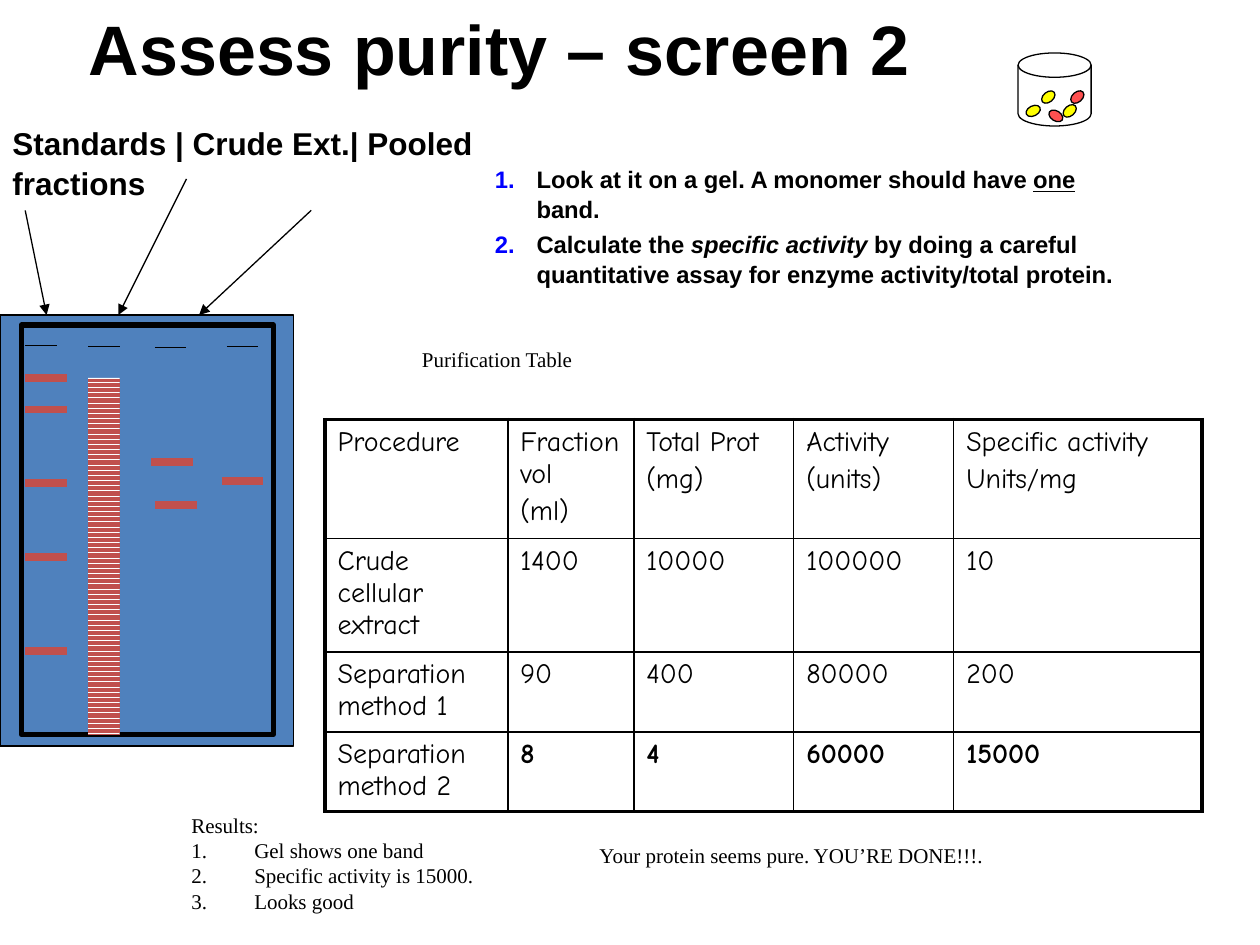
from lxml import etree
from pptx import Presentation
from pptx.dml.color import RGBColor
from pptx.enum import dml, shapes, text
from pptx.oxml.ns import qn
from pptx.util import Inches, Pt

BLACK = RGBColor(0, 0, 0)
WHITE = RGBColor(255, 255, 255)
GEL_BLUE = RGBColor(0x4F, 0x81, 0xBD)
BAND_RED = RGBColor(0xC0, 0x50, 0x4D)
YELLOW = RGBColor(255, 255, 0)
GRAIN_RED = RGBColor(0xFF, 0x50, 0x50)
KIND = shapes.MSO_SHAPE

TITLE = {"name": "Arial", "size": Pt(40), "bold": True}
HEADING = {"name": "Arial", "size": Pt(18), "bold": True}
STEP = {"name": "Arial", "size": Pt(13.6), "bold": True}
NOTE = {"name": "Times New Roman", "size": Pt(12)}
CELL = {"name": "Comic Neue", "size": Pt(16)}

ROWS = [
    ["Procedure", "Fraction vol\n(ml)", "Total Prot\n(mg)", "Activity\n(units)",
     "Specific activity\nUnits/mg"],
    ["Crude cellular extract", "1400", "10000", "100000", "10"],
    ["Separation method 1", "90", "400", "80000", "200"],
    ["Separation method 2", "8", "4", "60000", "15000"],
]
COLUMN_WIDTHS = [1.45, 1, 1.27, 1.27, 1.97]
ROW_HEIGHTS = [0.91, 0.87, 0.61, 0.61]


def add_span(para, words, style, **extra):
    span = para.add_run()
    span.text = words
    for key, value in {**style, **extra}.items():
        setattr(span.font, key, value)
    span.font.color.rgb = BLACK


def set_list(para, left, hanging, numbered=True, color=None):
    props = para._p.get_or_add_pPr()
    props.set("marL", str(Inches(left)))
    props.set("indent", str(-Inches(hanging)))
    if color:
        holder = etree.SubElement(props, qn("a:buClr"))
        etree.SubElement(holder, qn("a:srgbClr"), val=color)
    if numbered:
        etree.SubElement(props, qn("a:buFont"), typeface="+mj-lt")
        etree.SubElement(props, qn("a:buAutoNum"), type="arabicPeriod")


def add_text(page, place, paragraphs, style, wrap=True, **para_format):
    """Each paragraph is a list of (words, extra font values)."""
    frame = page.shapes.add_textbox(*map(Inches, place)).text_frame
    frame.word_wrap = wrap
    for number, spans in enumerate(paragraphs):
        para = frame.add_paragraph() if number else frame.paragraphs[0]
        for key, value in para_format.items():
            setattr(para, key, value)
        for words, extra in spans:
            add_span(para, words, style, **extra)
    return frame.paragraphs


def add_figure(parent, kind, place, fill=None, line=0.75, turn=0):
    figure = parent.shapes.add_shape(kind, *map(Inches, place))
    figure.shadow.inherit = False
    figure.rotation = turn
    if fill is None:
        figure.fill.background()
    else:
        figure.fill.solid()
        figure.fill.fore_color.rgb = fill
    if line:
        figure.line.color.rgb = BLACK
        figure.line.width = Pt(line)
    else:
        figure.line.fill.background()
    return figure


def add_line(page, start, end, color=BLACK, width=0.75, arrow=False):
    line = page.shapes.add_connector(
        shapes.MSO_CONNECTOR.STRAIGHT, *map(Inches, (*start, *end)))
    line.line.color.rgb = color
    line.line.width = Pt(width)
    if arrow:
        etree.SubElement(line.line._get_or_add_ln(), qn("a:tailEnd"), type="triangle")
    etree.SubElement(line._element.spPr, qn("a:effectLst"))


def add_gel(page):
    add_figure(page, KIND.RECTANGLE, (0, 2.5, 2.33, 3.42), GEL_BLUE)
    add_figure(page, KIND.RECTANGLE, (0.17, 2.58, 2, 3.25), line=3)
    for x, y in [(0.2, 2.74), (0.7, 2.75), (1.23, 2.76), (1.8, 2.75)]:
        add_line(page, (x, y), (x + 0.25, y))
    smear = add_figure(page, KIND.RECTANGLE, (0.7, 3, 0.25, 2.83), line=0)
    smear.fill.patterned()
    smear.fill.pattern = dml.MSO_PATTERN.DARK_HORIZONTAL
    smear.fill.fore_color.rgb = BAND_RED
    smear.fill.back_color.rgb = WHITE
    standards = [(0.2, y) for y in (3, 3.25, 3.83, 4.42, 5.17)]
    for x, y in standards + [(1.2, 3.67), (1.23, 4.01), (1.76, 3.82)]:
        add_line(page, (x, y), (x + 0.33, y), BAND_RED, 4.5)
    for start, end_x in [((0.2, 1.67), 0.37), ((1.48, 1.42), 0.94), ((2.47, 1.67), 1.58)]:
        add_line(page, start, (end_x, 2.5), arrow=True)


def add_beaker(page):
    beaker = page.shapes.add_group_shape()
    grains = [
        (8.16, 0.82, 0.08, 0.12, 243.6, YELLOW),
        (8.28, 0.71, 0.08, 0.12, 230.9, YELLOW),
        (8.34, 0.86, 0.08, 0.12, 122.2, GRAIN_RED),
        (8.43, 0.84, 0.12, 0.08, 138.8, YELLOW),
        (8.49, 0.73, 0.12, 0.08, 138.8, GRAIN_RED),
    ]
    for *place, turn, color in grains:
        add_figure(beaker, KIND.OVAL, place, color, turn=turn)
    add_figure(beaker, KIND.FLOWCHART_MAGNETIC_DISK, (8.08, 0.42, 0.58, 0.58))


def set_borders(cell, thick_sides):
    props = cell._tc.get_or_add_tcPr()
    for index, side in enumerate("LRTB"):
        width = Pt(2.25 if side in thick_sides else 1)
        border = etree.Element(qn("a:ln" + side), w=str(width))
        fill = etree.SubElement(border, qn("a:solidFill"))
        etree.SubElement(fill, qn("a:srgbClr"), val=str(BLACK))
        props.insert(index, border)


def add_purification_table(page):
    last_row, last_column = len(ROWS) - 1, len(COLUMN_WIDTHS) - 1
    table = page.shapes.add_table(
        len(ROWS), len(COLUMN_WIDTHS), Inches(2.58), Inches(3.33),
        Inches(sum(COLUMN_WIDTHS)), Inches(sum(ROW_HEIGHTS))).table
    table.first_row = table.horz_banding = False
    for column, width in zip(table.columns, COLUMN_WIDTHS):
        column.width = Inches(width)
    for r, (row, height) in enumerate(zip(table.rows, ROW_HEIGHTS)):
        row.height = Inches(height)
        for c, cell in enumerate(row.cells):
            cell.fill.background()
            edges = {"L": c == 0, "R": c == last_column, "T": r == 0, "B": r == last_row}
            set_borders(cell, [side for side, outer in edges.items() if outer])
            for number, words in enumerate(ROWS[r][c].split("\n")):
                frame = cell.text_frame
                para = frame.add_paragraph() if number else frame.paragraphs[0]
                para.space_before = Pt(3.2)
                add_span(para, words, CELL, bold=r == last_row and c > 0)


def add_title(page):
    title = page.shapes.title
    place = {"left": 0.25, "top": 0, "width": 7.42, "height": 0.75}
    for key, value in place.items():
        setattr(title, key, Inches(value))
    frame = title.text_frame
    frame.auto_size = text.MSO_AUTO_SIZE.NONE
    frame.vertical_anchor = text.MSO_ANCHOR.MIDDLE
    para = frame.paragraphs[0]
    para.alignment = text.PP_ALIGN.CENTER
    add_span(para, "Assess purity – screen 2", TITLE)


def main():
    deck = Presentation()
    deck.slide_width, deck.slide_height = Inches(10), Inches(7.5)
    page = deck.slides.add_slide(deck.slide_layouts[5])
    add_title(page)
    add_gel(page)
    steps = add_text(page, (3.33, 1.25, 5.81, 0.95), [
        [("Look at it on a gel. A monomer should have ", {}),
         ("one", {"underline": True}), (" band.", {})],
        [("Calculate the ", {}), ("specific activity", {"italic": True}),
         (" by doing a careful quantitative assay for enzyme activity/total protein.", {})],
    ], STEP, space_before=Pt(2.7), line_spacing=1.05)
    for para in steps:
        set_list(para, 0.83, 0.33, color="0000FF")
    lanes = add_text(page, (0, 0.92, 4.25, 5.58), [
        [("Standards | Crude Ext.| Pooled", {})], [("fractions", {})],
    ], HEADING, line_spacing=1.05)
    for para in lanes:
        set_list(para, 0.38, 0.38, numbered=False)
    add_purification_table(page)
    add_text(page, (3.25, 2.7, 1.41, 0.3), [[("Purification Table", {})]], NOTE, wrap=False)
    results = ["Results:", "Gel shows one band", "Specific activity is 15000.", "Looks good"]
    lines = add_text(page, (1.42, 6.4, 2.63, 1.1), [[(words, {})] for words in results], NOTE)
    for number, para in enumerate(lines):
        set_list(para, 0.5, 0.5, numbered=number > 0)
    add_beaker(page)
    add_text(page, (4.66, 6.64, 3.27, 0.3),
             [[("Your protein seems pure. YOU’RE DONE!!!.", {})]], NOTE, wrap=False)
    deck.save("out.pptx")


if __name__ == "__main__":
    main()
